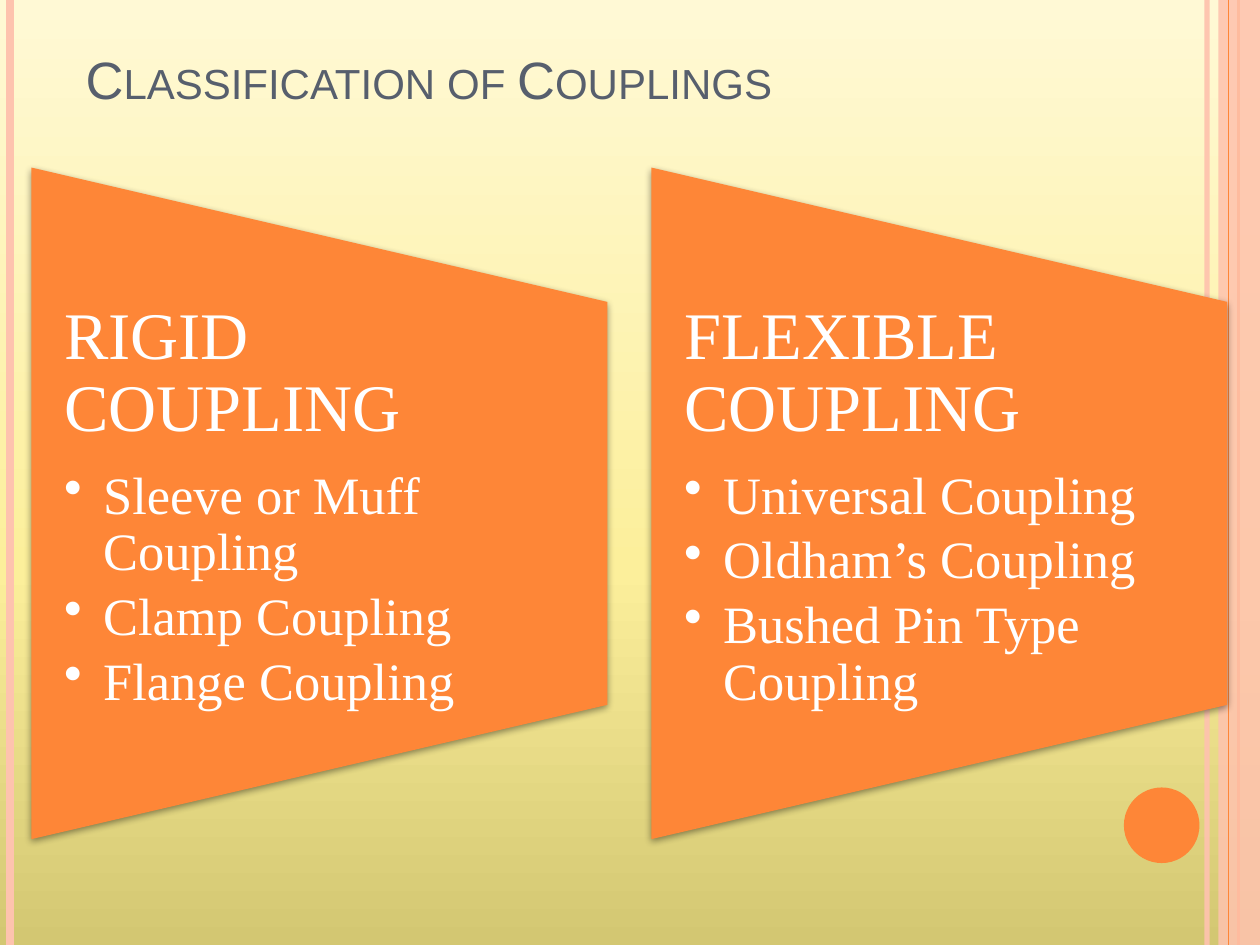
from lxml.etree import SubElement
from pptx import Presentation
from pptx.dml.color import RGBColor
from pptx.enum.shapes import MSO_CONNECTOR, MSO_SHAPE
from pptx.enum.text import MSO_ANCHOR, MSO_AUTO_SIZE, PP_ALIGN
from pptx.oxml.ns import qn
from pptx.util import Inches, Pt

TITLE = "Classification of Couplings"
PANELS = [
    ("RIGID COUPLING", ["Sleeve or Muff Coupling", "Clamp Coupling", "Flange Coupling"]),
    ("FLEXIBLE COUPLING", ["Universal Coupling", "Oldham’s Coupling", "Bushed Pin Type Coupling"]),
]
COLORS = {"orange": "FE8637", "pink": "FEC3AE", "title": "575F6D", "text": "FFFFFF", "shadow": "000000"}
BACKGROUND_STOPS = [(0, "D3C772"), (40, "FCEF9B"), (100, "FFF9D5")]
# x in inches, colour, width in points, opacity in percent
BACK_STRIPES = [(9.58, "pink", 3, 93), (0.08, "pink", 4.5, 100), (9.83, "orange", 1.5, 100)]
FRONT_STRIPES = [(9.75, "orange", 0.75, 100)]

SLIDE_WIDTH, SLIDE_HEIGHT = 10, 7.5
PANEL_LEFT, PANEL_TOP, PANEL_PITCH = 0.25, 1.33, 4.92
PANEL_WIDTH, PANEL_HEIGHT = 4.57, 5.33
TEXT_HEIGHT = PANEL_HEIGHT * 0.6
HEADING = {"size": Pt(38), "name": "Times New Roman"}
ITEM = {"size": Pt(30), "name": "Times New Roman"}
TITLE_FONT = {"size": Pt(30), "name": "Arial"}
TEXT_MARGINS = {"margin_left": Inches(0.26), "margin_right": Inches(0.27),
                "margin_top": 0, "margin_bottom": 0}


def rgb(name):
    return RGBColor.from_string(COLORS[name])


def apply(target, values):
    for attribute, value in values.items():
        setattr(target, attribute, value)


def set_opacity(properties, percent):
    color = next(properties.iter(qn("a:srgbClr")))
    SubElement(color, qn("a:alpha"), val=str(percent * 1000))


def paint_background(slide):
    fill = slide.background.fill
    fill.gradient()
    fill.gradient_angle = 90
    stops = next(slide.element.iter(qn("a:gsLst")))
    for stop in list(stops):
        stops.remove(stop)
    for position, color in BACKGROUND_STOPS:
        stop = SubElement(stops, qn("a:gs"), pos=str(position * 1000))
        SubElement(stop, qn("a:srgbClr"), val=color)


def add_stripes(shapes, stripes):
    for x, color, width, opacity in stripes:
        stripe = shapes.add_connector(MSO_CONNECTOR.STRAIGHT, Inches(x), 0, Inches(x), Inches(SLIDE_HEIGHT))
        stripe.line.color.rgb = rgb(color)
        stripe.line.width = Pt(width)
        properties = stripe.element.spPr
        if opacity < 100:
            set_opacity(properties, opacity)
        SubElement(properties, qn("a:effectLst"))


def add_solid(shapes, kind, box, color):
    shape = shapes.add_shape(kind, *map(Inches, box))
    shape.shadow.inherit = False
    shape.fill.solid()
    shape.fill.fore_color.rgb = rgb(color)
    shape.line.fill.background()
    return shape


def add_shadow(shape):
    effects = shape.element.spPr.find(qn("a:effectLst"))
    shadow = SubElement(effects, qn("a:outerShdw"), blurRad=str(Pt(4)), dist=str(Pt(1.6)),
                        dir="5400000", rotWithShape="0")
    SubElement(shadow, qn("a:srgbClr"), val=COLORS["shadow"])
    set_opacity(shadow, 42)


def add_bullet(paragraph):
    properties = paragraph._p.get_or_add_pPr()
    indent = Inches(0.31)
    properties.set("marL", str(indent))
    properties.set("indent", str(-indent))
    SubElement(properties, qn("a:buChar"), char="•")


def add_panel(slide, left, heading, items):
    shapes = slide.shapes.add_group_shape().shapes
    # The box is given before the quarter turn, so width and height swap about the centre.
    turn = (PANEL_HEIGHT - PANEL_WIDTH) / 2
    box = (left - turn, PANEL_TOP + turn, PANEL_HEIGHT, PANEL_WIDTH)
    panel = add_solid(shapes, MSO_SHAPE.FLOWCHART_MANUAL_OPERATION, box, "orange")
    panel.rotation = 270
    add_shadow(panel)

    text_top = PANEL_TOP + (PANEL_HEIGHT - TEXT_HEIGHT) / 2
    text_box = shapes.add_textbox(*map(Inches, (left, text_top, PANEL_WIDTH, TEXT_HEIGHT)))
    frame = text_box.text_frame
    apply(frame, {"word_wrap": True, **TEXT_MARGINS})
    for index, text in enumerate([heading, *items]):
        paragraph = frame.add_paragraph() if index else frame.paragraphs[0]
        paragraph.text = text
        apply(paragraph, {"line_spacing": 0.9, "space_after": Pt(4.5 if index else 13.3)})
        if index:
            paragraph.level = 1
            add_bullet(paragraph)
        apply(paragraph.font, ITEM if index else HEADING)
        paragraph.font.color.rgb = rgb("text")


def add_title(slide):
    title = slide.shapes.title
    apply(title, {"left": Inches(0.58), "top": 0, "width": Inches(8.17), "height": Inches(0.92)})
    frame = title.text_frame
    frame.text = TITLE
    apply(frame, {"vertical_anchor": MSO_ANCHOR.BOTTOM, "auto_size": MSO_AUTO_SIZE.NONE})
    paragraph = frame.paragraphs[0]
    paragraph.alignment = PP_ALIGN.LEFT
    run = paragraph.runs[0]
    apply(run.font, TITLE_FONT)
    run.font.color.rgb = rgb("title")
    run._r.get_or_add_rPr().set("cap", "small")


def main():
    presentation = Presentation()
    presentation.slide_width = Inches(SLIDE_WIDTH)
    presentation.slide_height = Inches(SLIDE_HEIGHT)
    slide = presentation.slides.add_slide(presentation.slide_layouts[5])
    paint_background(slide)

    add_stripes(slide.shapes, BACK_STRIPES)
    band = add_solid(slide.shapes, MSO_SHAPE.RECTANGLE, (9.67, 0, 0.33, SLIDE_HEIGHT), "pink")
    set_opacity(band.element.spPr, 87)
    add_stripes(slide.shapes, FRONT_STRIPES)
    add_solid(slide.shapes, MSO_SHAPE.OVAL, (8.92, 6.25, 0.6, 0.6), "orange")

    add_title(slide)
    for index, (heading, items) in enumerate(PANELS):
        add_panel(slide, PANEL_LEFT + index * PANEL_PITCH, heading, items)
    presentation.save("out.pptx")


if __name__ == "__main__":
    main()
